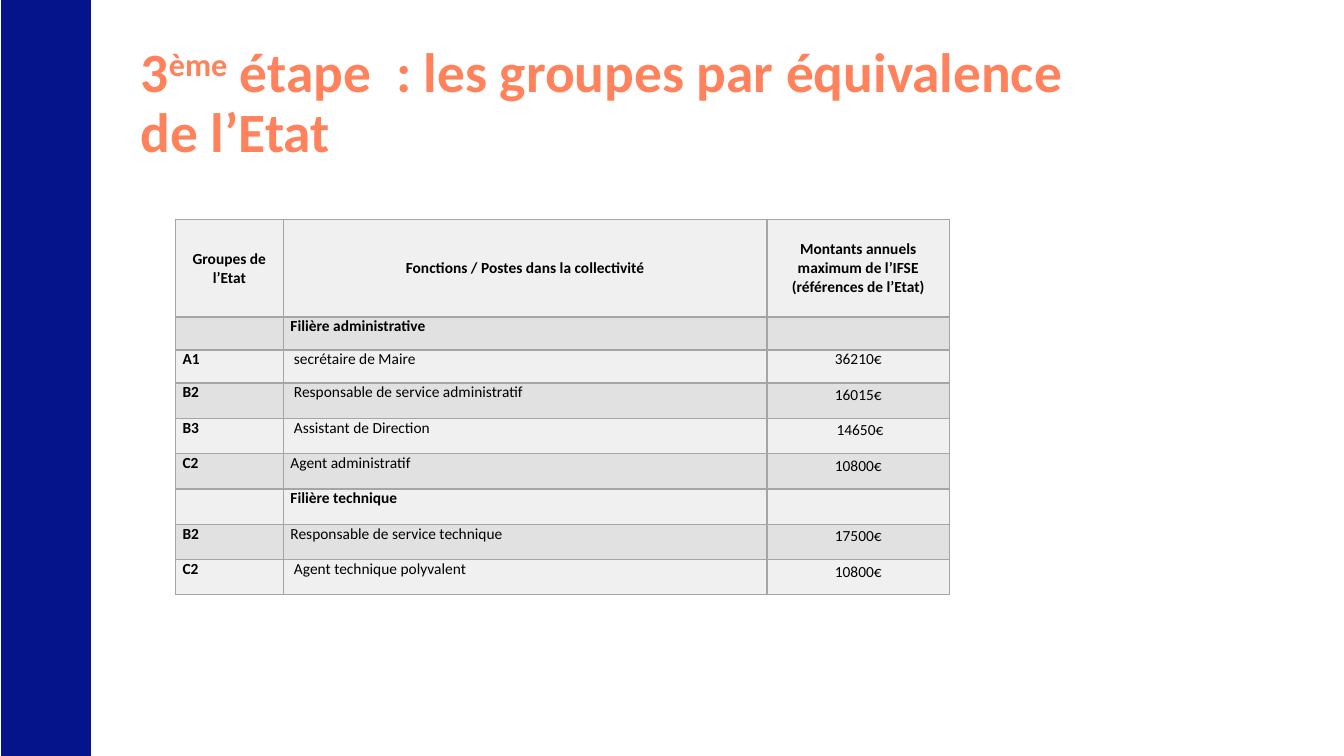
"""Build the slide on the groups by equivalence with the State."""
import pptx
import pptx.dml.color
import pptx.enum.shapes
import pptx.enum.text
import pptx.oxml
import pptx.oxml.ns
import pptx.util

Cm = pptx.util.Cm
ALIGN = pptx.enum.text.PP_ALIGN
ANCHOR = pptx.enum.text.MSO_ANCHOR


def rgb(value):
    return pptx.dml.color.RGBColor.from_string(value)


def add_text(p, text, size=11, color="000000", bold=False, align=ALIGN.LEFT, spacing=1.0, baseline=0):
    p.alignment = align
    p.line_spacing = spacing
    r = p.add_run()
    r.text = text
    r.font.name = "Calibri"
    r.font.size = pptx.util.Pt(size)
    r.font.bold = bold
    r.font.color.rgb = rgb(color)
    if baseline:
        r.font._element.set("baseline", str(baseline))


prs = pptx.Presentation()
prs.slide_width, prs.slide_height = Cm(33.87), Cm(19.05)
slide = prs.slides.add_slide(prs.slide_layouts[6])

sp = slide.shapes.add_shape(pptx.enum.shapes.MSO_SHAPE.RECTANGLE, Cm(0.03), 0, Cm(2.26), Cm(19.05))
sp.shadow.inherit = False
sp.fill.solid()
sp.fill.fore_color.rgb = rgb("06148C")
sp.line.fill.background()

tf = slide.shapes.add_textbox(Cm(3.3), Cm(0.99), Cm(25.02), Cm(3.3)).text_frame
tf.word_wrap = True
tf.vertical_anchor = ANCHOR.MIDDLE
title = [("3", 0), ("ème", 30000), (" étape  : les groupes par équivalence de l’Etat", 0)]
for text, baseline in title:
    add_text(tf.paragraphs[0], text, size=39.6, color="FF825C", bold=True, spacing=0.9, baseline=baseline)

rows = [
    ("Groupes de l’Etat", "Fonctions / Postes dans la collectivité",
     "Montants annuels maximum de l’IFSE (références de l’Etat)"),
    ("", "Filière administrative", ""),
    ("A1", " secrétaire de Maire", "36210€"),
    ("B2", " Responsable de service administratif", "16015€"),
    ("B3", " Assistant de Direction", " 14650€"),
    ("C2", "Agent administratif", "10800€"),
    ("", "Filière technique", ""),
    ("B2", "Responsable de service technique", "17500€"),
    ("C2", " Agent technique polyvalent", "10800€"),
]
widths = [2.72, 12.19, 4.6]
heights = [2.46] + [0.83] * 2 + [0.89] * 6
frame = slide.shapes.add_table(len(rows), len(widths), Cm(4.42), Cm(5.53), Cm(sum(widths)), Cm(sum(heights)))
table = frame.table
for column, width in zip(table.columns, widths):
    column.width = Cm(width)

for i, (row, height) in enumerate(zip(rows, heights)):
    table.rows[i].height = Cm(height)
    header = i == 0
    for j, text in enumerate(row):
        cell = table.cell(i, j)
        cell.margin_left = cell.margin_right = Cm(0.18)
        cell.margin_top = cell.margin_bottom = 0
        cell.vertical_anchor = ANCHOR.MIDDLE if header else ANCHOR.TOP
        tcPr = cell._tc.get_or_add_tcPr()
        for side in "LRTB":
            tcPr.append(pptx.oxml.parse_xml(
                f'<a:ln{side} {pptx.oxml.ns.nsdecls("a")} w="12700"><a:solidFill>'
                f'<a:srgbClr val="A5A5A5"/></a:solidFill></a:ln{side}>'))
        cell.fill.solid()
        cell.fill.fore_color.rgb = rgb("E1E1E1" if i % 2 else "F0F0F0")
        if text:
            add_text(cell.text_frame.paragraphs[0], text,
                     bold=header or j == 0 or not row[0],
                     align=ALIGN.CENTER if header or j == 2 else ALIGN.LEFT,
                     spacing=1.15 if j == 2 and i > 2 else 1.0)

prs.save("out.pptx")
